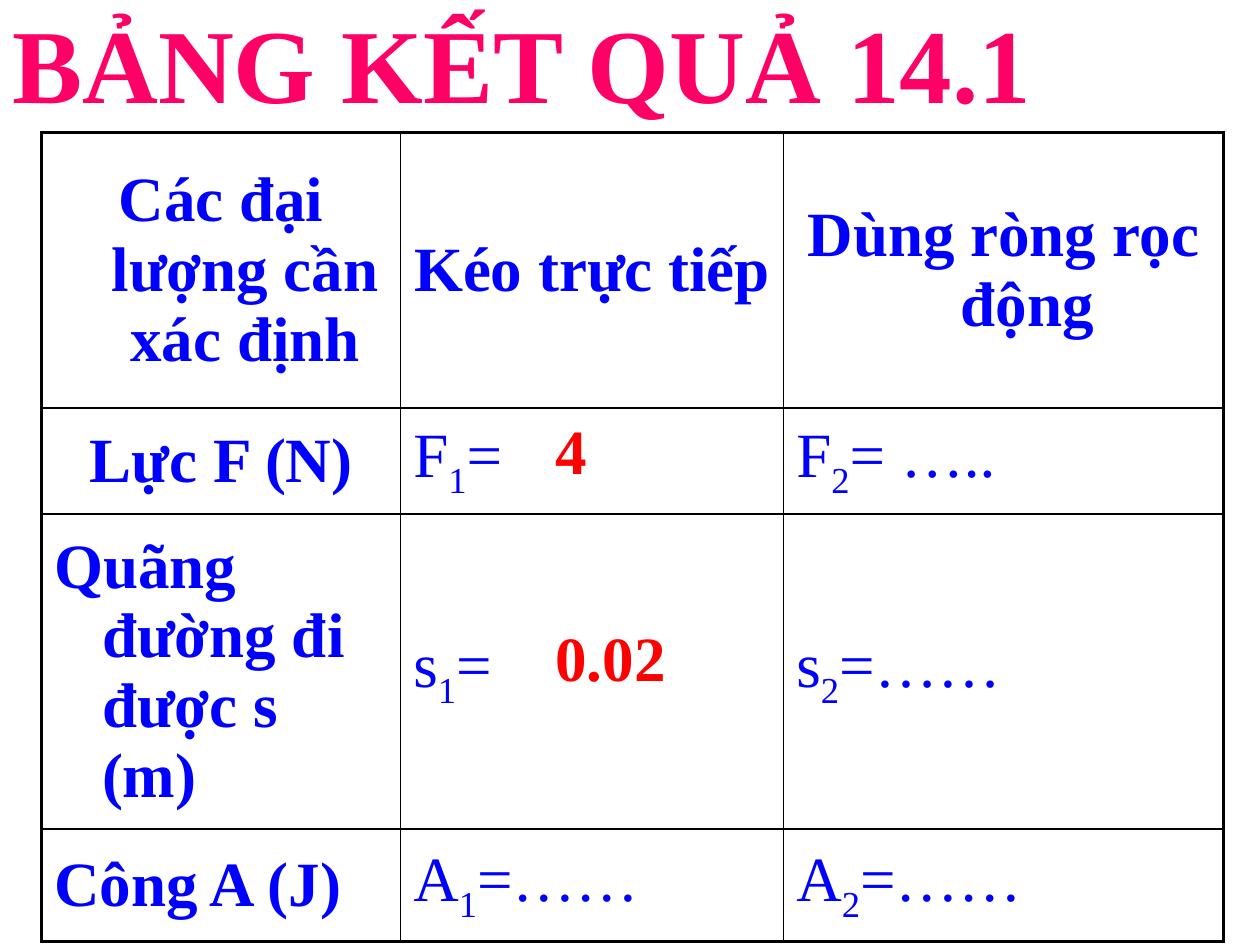
from pptx import Presentation, util as u
from pptx.dml.color import RGBColor
from pptx.enum import text
from pptx.oxml import xmlchemy as x
from lxml import etree

BLUE, RED, PINK, BLACK = "0000FF", "FF0000", "FF0066", "000000"
NS = "{http://schemas.openxmlformats.org/drawingml/2006/main}"


def tint(code):
    return RGBColor.from_string(code)


class Deck:
    font = "Times New Roman"
    size = 36

    def __init__(self, wide, high):
        self.prs = Presentation()
        self.prs.slide_width = u.Inches(wide)
        self.prs.slide_height = u.Inches(high)
        self.slide = self.prs.slides.add_slide(self.prs.slide_layouts[6])

    def run(self, para, words, color, bold=True, size=None, base=0):
        run = para.add_run()
        run.text = words
        font = run.font
        font.name, font.size, font.bold = self.font, u.Pt(size or self.size), bold
        font.color.rgb = tint(color)
        if base:
            font._element.set("baseline", str(base * 1000))

    def label(self, box, words, color, size=None):
        shape = self.slide.shapes.add_textbox(*map(u.Inches, box))
        frame = shape.text_frame
        frame.word_wrap = True
        frame.auto_size = text.MSO_AUTO_SIZE.SHAPE_TO_FIT_TEXT
        para = frame.paragraphs[0]
        space = etree.SubElement(para._p.get_or_add_pPr(), NS + "spcBef")
        etree.SubElement(space, NS + "spcPct", val="50000")
        self.run(para, words, color, size=size)

    def edge(self, cell, side, width):
        line = etree.SubElement(cell._tc.get_or_add_tcPr(), NS + "ln" + side,
                                w=str(u.Pt(width)))
        fill = etree.SubElement(line, NS + "solidFill")
        etree.SubElement(fill, NS + "srgbClr", val=BLACK)

    def cell(self, cell, parts, mid, edges):
        for side, width in edges.items():
            self.edge(cell, side, width)
        cell.fill.background()
        cell.vertical_anchor = text.MSO_ANCHOR.MIDDLE
        para = cell.text_frame.paragraphs[0]
        para.alignment = text.PP_ALIGN.CENTER if mid else text.PP_ALIGN.LEFT
        props = para._p.get_or_add_pPr()
        props.set("marL", str(u.Inches(0.38)))
        props.set("indent", str(u.Inches(-0.38)))
        for spot, words in enumerate(parts):
            self.run(para, words, BLUE, bold=len(parts) == 1,
                     base=-25 if spot == 1 else 0)

    def table(self, box, cols, rows, data):
        grid = self.slide.shapes.add_table(
            len(rows), len(cols), *map(u.Inches, box)).table
        grid.first_row = grid.horz_banding = False
        for col, wide in zip(grid.columns, cols):
            col.width = u.Inches(wide)
        for row, high in zip(grid.rows, rows):
            row.height = u.Inches(high)
        for r, line in enumerate(data):
            for c, parts in enumerate(line):
                edges = {"L": 2 if c == 0 else 1,
                         "R": 2 if c == len(cols) - 1 else 1,
                         "T": 2 if r == 0 else 1,
                         "B": 2 if r == len(rows) - 1 else 1}
                mid = r == 0 or (r == 1 and c == 0)
                self.cell(grid.cell(r, c), parts, mid, edges)


def main():
    deck = Deck(10, 7.5)
    deck.label((0, -0.06, 9.17, 1.11), "BẢNG KẾT QUẢ 14.1", PINK, 60)
    deck.label((4.31, 3.22, 0.8, 0.71), "4", RED)
    deck.label((4.31, 4.86, 1.42, 0.71), "0.02", RED)
    deck.table((0.33, 1.05, 9.38, 6.23), (2.85, 3.04, 3.49),
               (2.19, 0.84, 2.31, 0.89), [
        [["Các đại lượng cần xác định"], ["Kéo trực tiếp"], ["Dùng ròng rọc động"]],
        [["Lực F (N)"], ["F", "1", "="], ["F", "2", "= ….."]],
        [["Quãng đường đi được s (m)"], ["s", "1", "="], ["s", "2", "=……"]],
        [["Công A (J)"], ["A", "1", "=……"], ["A", "2", "=……"]],
    ])
    deck.prs.save("out.pptx")


if __name__ == "__main__":
    main()
